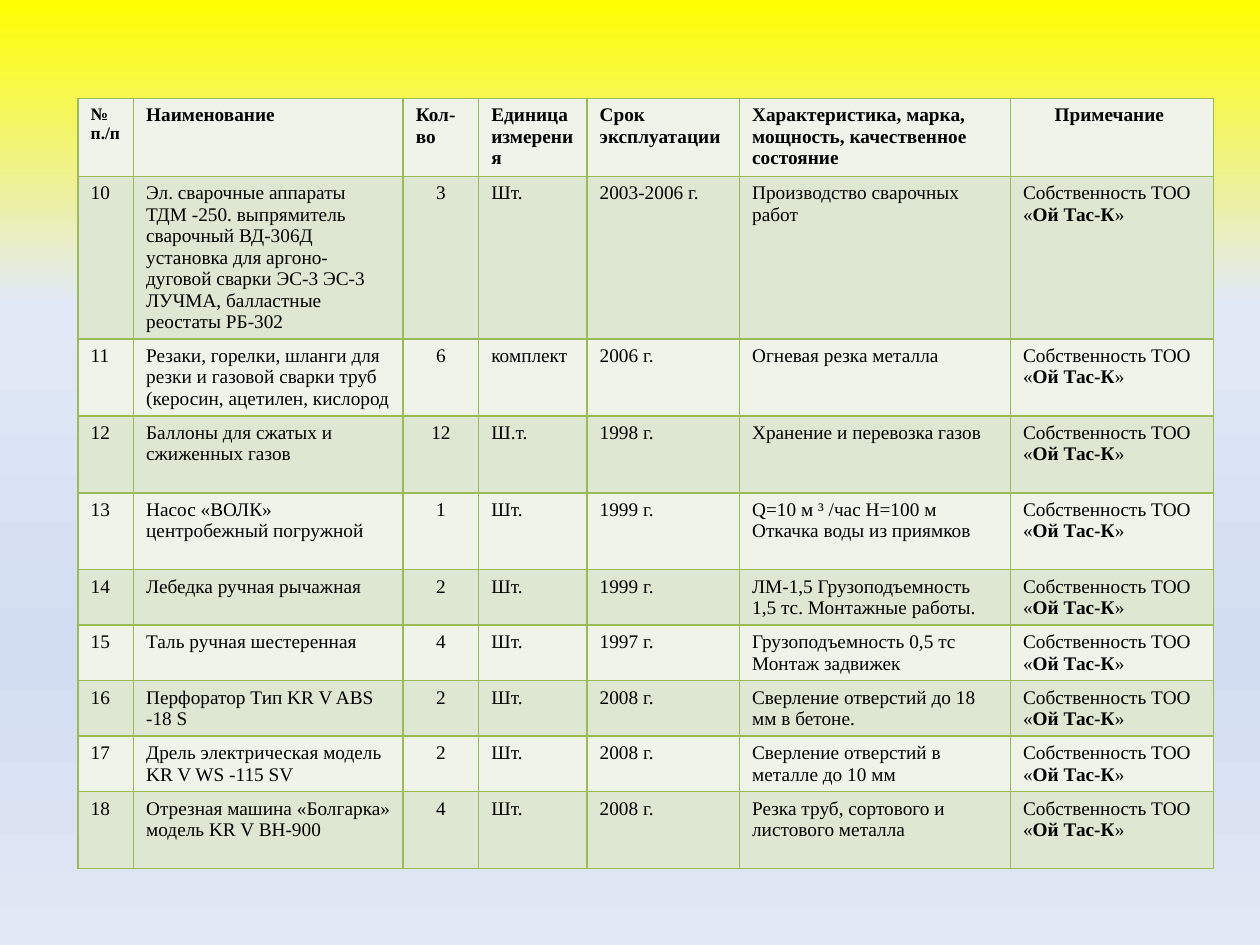
"""Build the equipment inventory slide, rows 10 to 18."""
from lxml import etree
from pptx import Presentation
from pptx.dml.color import RGBColor
from pptx.enum import text
from pptx.oxml import ns
from pptx.util import Inches, Pt

THEME = {
    "font": "Times New Roman",
    "text": "000000",
    "border": "9BBB59",
    "bands": ("EFF3EA", "DEE7D1"),
    "gradient": ((0, "FFFF00"), (32, "E2E9F6"), (69, "D2DDF1"), (100, "E1E8F5")),
    "size": 11,
    "number_header_size": 10,
    "border_width": 1,
}

HEADERS = (
    "№ п./п", "Наименование", "Кол-во", "Единица\nизмерения", "Срок\nэксплуатации",
    "Характеристика, марка, мощность, качественное состояние", "Примечание ",
)
EQUIPMENT = (
    ("Эл. сварочные аппараты ТДМ -250. выпрямитель сварочный ВД-306Д установка для "
     "аргоно- дуговой сварки ЭС-3 ЭС-3 ЛУЧМА, балластные реостаты РБ-302",
     "3", "Шт.", "2003-2006 г.", "Производство сварочных работ"),
    ("Резаки, горелки, шланги для резки и газовой сварки труб (керосин, ацетилен, кислород",
     "6", "комплект", "2006 г.", "Огневая резка металла"),
    ("Баллоны для сжатых и сжиженных газов",
     "12", "Ш.т.", "1998 г.", "Хранение и перевозка газов"),
    ("Насос «ВОЛК» центробежный погружной",
     "1", "Шт.", "1999 г.", "Q=10 м ³ /час Н=100 м Откачка воды из приямков"),
    ("Лебедка ручная рычажная",
     "2", "Шт.", "1999 г.", "ЛМ-1,5 Грузоподъемность 1,5 тс. Монтажные работы."),
    ("Таль ручная шестеренная",
     "4", "Шт.", "1997 г.", "Грузоподъемность 0,5 тс Монтаж задвижек"),
    ("Перфоратор Тип KR V ABS -18 S",
     "2", "Шт.", "2008 г.", "Сверление отверстий до 18 мм в бетоне."),
    ("Дрель электрическая модель KR V WS -115 SV",
     "2", "Шт.", "2008 г.", "Сверление отверстий в металле до 10 мм"),
    ("Отрезная машина «Болгарка» модель KR V ВН-900",
     "4", "Шт.", "2008 г.", "Резка труб, сортового и листового металла"),
)
OWNER = (("Собственность ТОО «", False), ("Ой Тас-К", True), ("»", False))
FIRST_NUMBER = 10
QUANTITY, NOTE = 2, 6

LEFT, TOP = 0.62, 0.78
COLUMN_WIDTHS = (0.44, 2.14, 0.6, 0.86, 1.21, 2.15, 1.61)
ROW_HEIGHTS = (0.62, 1.29, 0.61, 0.61, 0.61, 0.44, 0.44, 0.44, 0.44, 0.61)


def add_element(parent, tag, **attributes):
    return etree.SubElement(parent, ns.qn(tag), attributes)


def paint_background(slide):
    fill = slide.background.fill
    fill.gradient()
    fill.gradient_angle = 270
    stops = next(slide.background._cSld.iter(ns.qn("a:gsLst")))
    for stop in list(stops):
        stops.remove(stop)
    for percent, colour in THEME["gradient"]:
        stop = add_element(stops, "a:gs", pos=str(percent * 1000))
        add_element(stop, "a:srgbClr", val=colour)


def add_borders(cell):
    properties = cell._tc.get_or_add_tcPr()
    for side in ("a:lnL", "a:lnR", "a:lnT", "a:lnB"):
        line = add_element(properties, side, w=str(Pt(THEME["border_width"])))
        add_element(add_element(line, "a:solidFill"), "a:srgbClr", val=THEME["border"])


def write_cell(cell, paragraphs, size, alignment):
    frame = cell.text_frame
    for index, pieces in enumerate(paragraphs):
        paragraph = frame.add_paragraph() if index else frame.paragraphs[0]
        paragraph.alignment = alignment
        for content, bold in pieces:
            run = paragraph.add_run()
            run.text = content
            run.font.name = THEME["font"]
            run.font.size = Pt(size)
            run.font.bold = bold
            run.font.color.rgb = RGBColor.from_string(THEME["text"])


def table_rows():
    yield [[[(line, True)] for line in header.split("\n")] for header in HEADERS]
    for number, item in enumerate(EQUIPMENT, FIRST_NUMBER):
        yield [[[(value, False)]] for value in (str(number), *item)] + [[OWNER]]


def add_inventory(slide):
    table = slide.shapes.add_table(
        len(ROW_HEIGHTS), len(COLUMN_WIDTHS), Inches(LEFT), Inches(TOP),
        Inches(sum(COLUMN_WIDTHS)), Inches(sum(ROW_HEIGHTS)),
    ).table
    for column, width in zip(table.columns, COLUMN_WIDTHS):
        column.width = Inches(width)
    for row, height in zip(table.rows, ROW_HEIGHTS):
        row.height = Inches(height)
    for row_index, values in enumerate(table_rows()):
        for column_index, paragraphs in enumerate(values):
            cell = table.cell(row_index, column_index)
            is_header = row_index == 0
            centred = column_index == (NOTE if is_header else QUANTITY)
            is_number_header = is_header and column_index == 0
            size = THEME["number_header_size" if is_number_header else "size"]
            alignment = text.PP_ALIGN.CENTER if centred else text.PP_ALIGN.LEFT
            write_cell(cell, paragraphs, size, alignment)
            add_borders(cell)
            cell.fill.solid()
            cell.fill.fore_color.rgb = RGBColor.from_string(THEME["bands"][row_index % 2])


def main():
    presentation = Presentation()
    presentation.slide_width, presentation.slide_height = Inches(10), Inches(7.5)
    slide = presentation.slides.add_slide(presentation.slide_layouts[6])
    paint_background(slide)
    add_inventory(slide)
    presentation.save("out.pptx")


if __name__ == "__main__":
    main()
